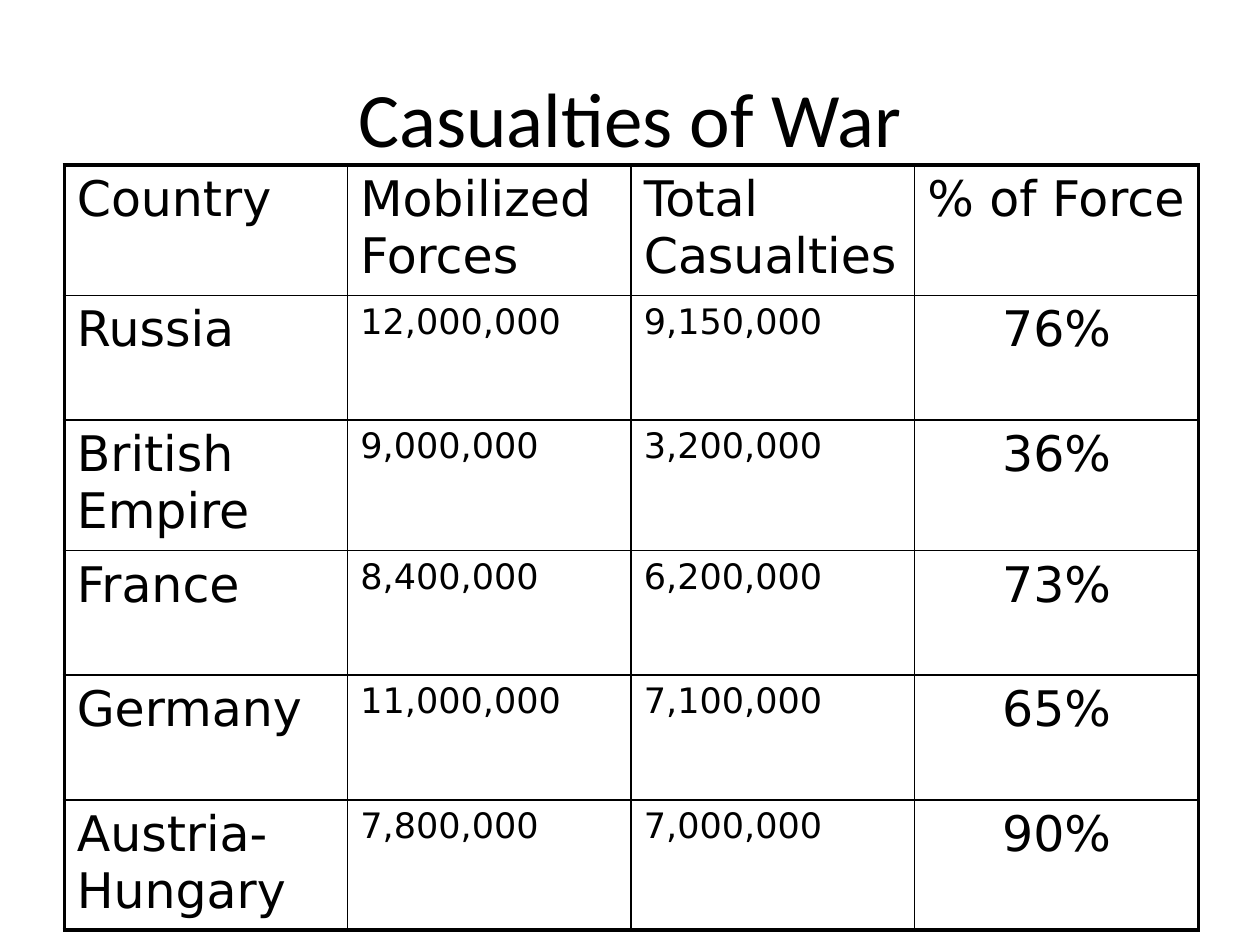
import pptx
import pptx.dml.color
import pptx.enum.text
import pptx.oxml
import pptx.oxml.ns
import pptx.util
from pptx.util import Inches

BLACK = pptx.dml.color.RGBColor(0, 0, 0)
ALIGN = pptx.enum.text.PP_ALIGN
ANCHOR = pptx.enum.text.MSO_ANCHOR
OUTER_WIDTH = 2.25
INNER_WIDTH = 1

CASUALTIES = [
    ("Country", "Mobilized Forces", "Total Casualties", "% of Force"),
    ("Russia", "12,000,000", "9,150,000", "76%"),
    ("British Empire", "9,000,000", "3,200,000", "36%"),
    ("France", "8,400,000", "6,200,000", "73%"),
    ("Germany", "11,000,000", "7,100,000", "65%"),
    ("Austria-Hungary", "7,800,000", "7,000,000", "90%"),
]


def write_text(frame, text, font_name, size, align):
    paragraph = frame.paragraphs[0]
    paragraph.alignment = align
    run = paragraph.add_run()
    run.text = text
    run.font.name = font_name
    run.font.size = pptx.util.Pt(size)
    run.font.color.rgb = BLACK


def add_title(slide, text):
    title = slide.shapes.add_textbox(Inches(0.5), Inches(0.3), Inches(9), Inches(1.25))
    title.text_frame.word_wrap = True
    title.text_frame.vertical_anchor = ANCHOR.MIDDLE
    write_text(title.text_frame, text, "Calibri", 44, ALIGN.CENTER)


def set_borders(cell, widths):
    properties = cell._tc.get_or_add_tcPr()
    for side, width in widths.items():
        properties.append(pptx.oxml.parse_xml(
            f'<a:{side} {pptx.oxml.ns.nsdecls("a")} w="{pptx.util.Pt(width)}">'
            f'<a:solidFill><a:srgbClr val="{BLACK}"/></a:solidFill></a:{side}>'
        ))


def add_casualty_table(slide, rows):
    last_row, last_column = len(rows) - 1, len(rows[0]) - 1
    table = slide.shapes.add_table(
        len(rows), len(rows[0]), Inches(0.51), Inches(1.31), Inches(9), Inches(6.07)
    ).table
    table.first_row = False
    table.horz_banding = False
    for column in table.columns:
        column.width = Inches(2.25)
    for row in table.rows:
        row.height = Inches(0.99)
    for r, values in enumerate(rows):
        for c, value in enumerate(values):
            cell = table.cell(r, c)
            edges = {"lnL": c == 0, "lnR": c == last_column,
                     "lnT": r == 0, "lnB": r == last_row}
            set_borders(cell, {side: OUTER_WIDTH if outer else INNER_WIDTH
                               for side, outer in edges.items()})
            cell.fill.background()
            is_count = r > 0 and 0 < c < last_column
            is_percentage = r > 0 and c == last_column
            write_text(cell.text_frame, value, "DejaVu Sans", 20 if is_count else 28,
                       ALIGN.CENTER if is_percentage else ALIGN.LEFT)


def main():
    """Build the slide with the casualties of war by country."""
    deck = pptx.Presentation()
    deck.slide_width = Inches(10)
    deck.slide_height = Inches(7.5)
    slide = deck.slides.add_slide(deck.slide_layouts[6])
    add_title(slide, "Casualties of War")
    add_casualty_table(slide, CASUALTIES)
    deck.save("out.pptx")


if __name__ == "__main__":
    main()
